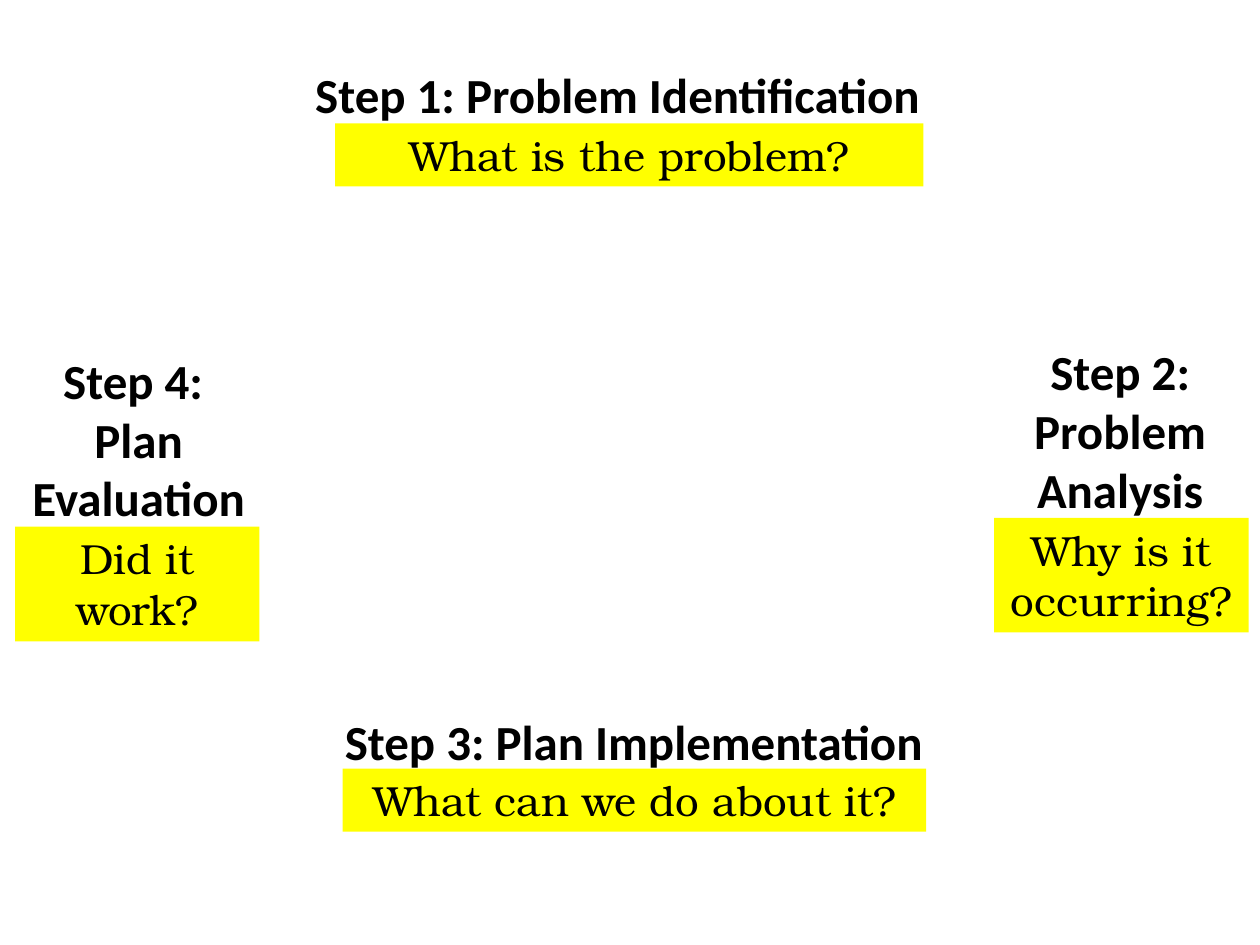
from dataclasses import dataclass

from pptx import Presentation
from pptx.dml.color import RGBColor as RGB
from pptx.enum.shapes import MSO_SHAPE as Shape
from pptx.enum.text import MSO_ANCHOR as Anchor, MSO_AUTO_SIZE as AutoSize, PP_ALIGN as Align
from pptx.util import Inches, Pt


@dataclass(frozen=True)
class Theme:
    ink: RGB = RGB(0, 0, 0)
    highlight: RGB = RGB(255, 255, 0)
    step_font: str = "Calibri"
    step_size: int = 28
    question_font: str = "TeX Gyre Bonum"
    question_size: int = 24


def write_text(sp, text, *, font, size, color, bold=False):
    tf = sp.text_frame
    tf.word_wrap = True
    tf.auto_size = AutoSize.SHAPE_TO_FIT_TEXT
    tf.vertical_anchor = Anchor.TOP
    p = tf.paragraphs[0]
    p.alignment = Align.CENTER
    for i, line in enumerate(text.split("\n")):
        if i:
            p.add_line_break()
        r = p.add_run()
        r.text = line
        r.font.name = font
        r.font.size = Pt(size)
        r.font.bold = bold
        r.font.color.rgb = color


class SlideBuilder:
    def __init__(self, s, theme):
        self.s = s
        self.theme = theme

    def step(self, text, box):
        sp = self.s.shapes.add_textbox(*map(Inches, box))
        write_text(sp, text, font=self.theme.step_font, size=self.theme.step_size,
                   color=self.theme.ink, bold=True)

    def question(self, text, box):
        sp = self.s.shapes.add_shape(Shape.RECTANGLE, *map(Inches, box))
        sp.shadow.inherit = False
        sp.fill.solid()
        sp.fill.fore_color.rgb = self.theme.highlight
        sp.line.fill.background()
        write_text(sp, text, font=self.theme.question_font,
                   size=self.theme.question_size, color=self.theme.ink)


STEPS = [
    ("Step 1: Problem Identification", (1.71, 0.46, 6.38, 0.57),
     "What is the problem?", (2.66, 0.98, 4.67, 0.5)),
    ("Step 2: Problem Analysis", (8.02, 2.66, 1.74, 1.51),
     "Why is it occurring?", (7.89, 4.11, 2.02, 0.91)),
    ("Step 3: Plan Implementation", (2.05, 5.6, 5.96, 0.57),
     "What can we do about it?", (2.72, 6.1, 4.63, 0.5)),
    ("Step 4: \nPlan\nEvaluation", (0.14, 2.73, 1.92, 1.51),
     "Did it work?", (0.12, 4.18, 1.94, 0.91)),
]


def main():
    prs = Presentation()
    prs.slide_width, prs.slide_height = Inches(10), Inches(7.5)
    builder = SlideBuilder(prs.slides.add_slide(prs.slide_layouts[6]), Theme())
    for step, step_box, question, question_box in STEPS:
        builder.step(step, step_box)
        builder.question(question, question_box)
    prs.save("out.pptx")


if __name__ == "__main__":
    main()
